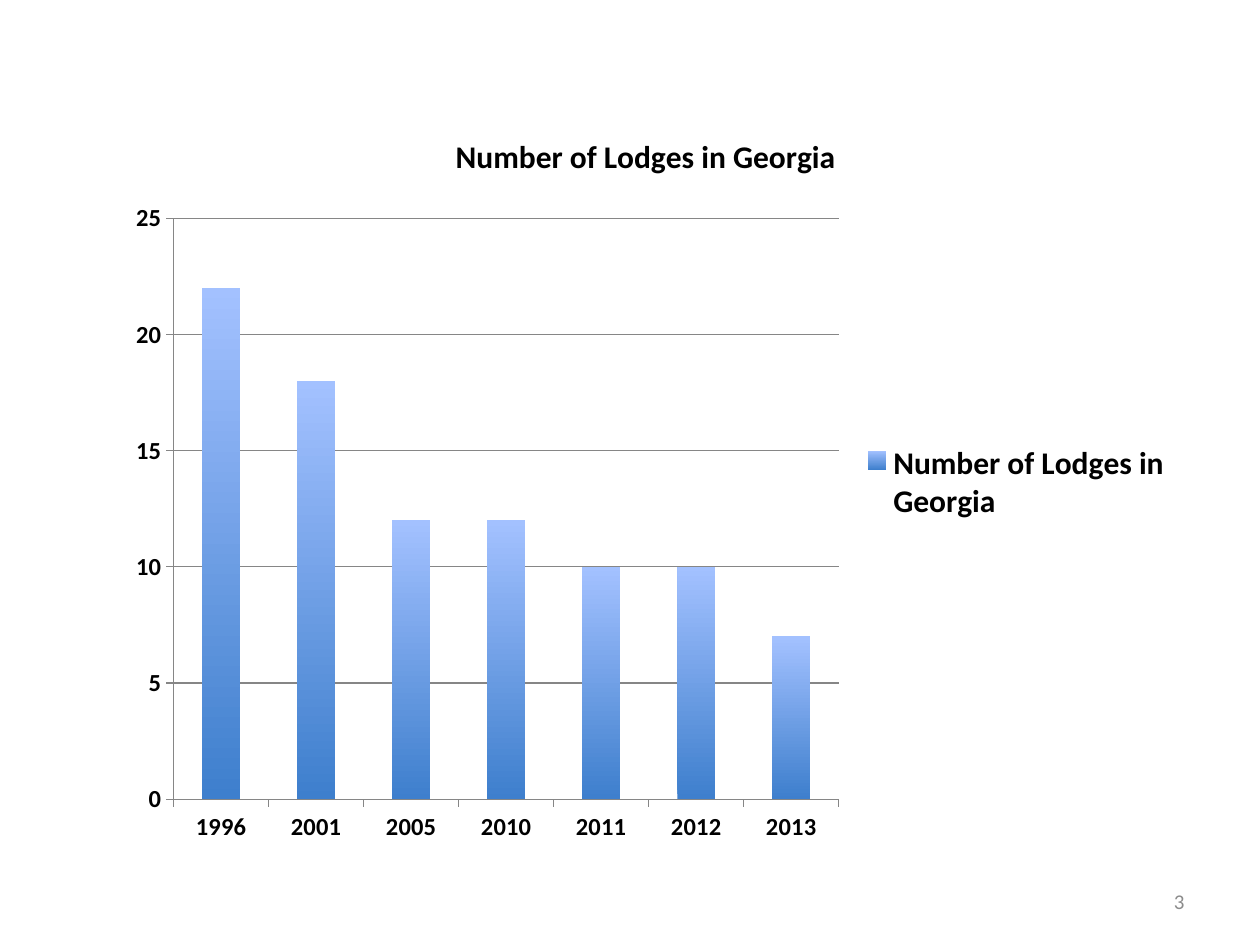
from pptx import Presentation
from pptx.chart.data import CategoryChartData
from pptx.dml.color import RGBColor
from pptx.enum.chart import XL_CHART_TYPE, XL_LEGEND_POSITION, XL_TICK_MARK
from pptx.enum.text import MSO_ANCHOR, PP_ALIGN
from pptx.oxml import parse_xml
from pptx.oxml.ns import nsdecls, qn
from pptx.util import Pt

COLUMNS = XL_CHART_TYPE.COLUMN_CLUSTERED
LEGEND_RIGHT = XL_LEGEND_POSITION.RIGHT
TICK_OUTSIDE = XL_TICK_MARK.OUTSIDE
MIDDLE = MSO_ANCHOR.MIDDLE
RIGHT = PP_ALIGN.RIGHT

FONT = "Calibri"
BLACK, GREY, AXIS_GREY = "000000", "8C8C8C", "868686"
BAR_BOTTOM, BAR_TOP = "3E7FCD", "A3C1FF"

LODGES_TITLE = "Number of Lodges in Georgia"
LODGES_BY_YEAR = {
    "1996": 22, "2001": 18, "2005": 12, "2010": 12,
    "2011": 10, "2012": 10, "2013": 7,
}


def colour(hex_value):
    return RGBColor.from_string(hex_value)


def format_font(font, hex_value=BLACK, **values):
    for name, value in {"name": FONT, **values}.items():
        setattr(font, name, value)
    font.color.rgb = colour(hex_value)


def format_axis_line(line):
    line.color.rgb = colour(AXIS_GREY)
    line.width = Pt(0.75)


def set_layout(parent, index, fractions, inner=False):
    """Place a chart part by its fractions (x, y, w, h) of the chart box."""
    for old in parent.findall(qn("c:layout")):
        parent.remove(old)
    target = '<c:layoutTarget val="inner"/>' if inner else ""
    modes = '<c:xMode val="edge"/><c:yMode val="edge"/>'
    sizes = "".join(f'<c:{key} val="{value}"/>' for key, value in zip("xywh", fractions))
    parent.insert(index, parse_xml(
        f'<c:layout {nsdecls("c")}><c:manualLayout>{target}{modes}{sizes}'
        "</c:manualLayout></c:layout>"))


def add_lodges_chart(page, box):
    data = CategoryChartData()
    data.categories = list(LODGES_BY_YEAR)
    data.add_series(LODGES_TITLE, list(LODGES_BY_YEAR.values()))
    chart = page.shapes.add_chart(COLUMNS, *map(Pt, box), data).chart
    format_font(chart.font, size=Pt(10))

    chart.has_title = True
    title_frame = chart.chart_title.text_frame
    title_frame.text = LODGES_TITLE
    format_font(title_frame.paragraphs[0].runs[0].font, size=Pt(18), bold=True)

    chart.has_legend = True
    legend = chart.legend
    legend.position = LEGEND_RIGHT
    legend.include_in_layout = False
    format_font(legend.font, size=Pt(18), bold=True)

    for axis in (chart.category_axis, chart.value_axis):
        axis.major_tick_mark = TICK_OUTSIDE
        format_font(axis.tick_labels.font, size=Pt(14), bold=True)
        format_axis_line(axis.format.line)
    values = chart.value_axis
    values.minimum_scale, values.maximum_scale, values.major_unit = 0, 25, 5
    values.has_major_gridlines = True
    format_axis_line(values.major_gridlines.format.line)

    plot = chart.plots[0]
    plot.gap_width = 150
    plot.vary_by_categories = False
    fill = plot.series[0].format.fill
    fill.gradient()
    fill.gradient_angle = 90
    for stop, hex_value in zip(fill.gradient_stops, (BAR_BOTTOM, BAR_TOP)):
        stop.color.rgb = colour(hex_value)

    chart_xml = chart.element.find(qn("c:chart"))
    set_layout(chart_xml.find(qn("c:plotArea")), 0, (0.06, 0.15, 0.62, 0.78), inner=True)
    set_layout(chart_xml.find(qn("c:legend")), 1, (0.7, 0.45, 0.29, 0.11))


def add_page_number(page, box, number):
    frame = page.shapes.add_textbox(*map(Pt, box)).text_frame
    frame.word_wrap = True
    frame.vertical_anchor = MIDDLE
    para = frame.paragraphs[0]
    para.alignment = RIGHT
    span = para.add_run()
    span.text = str(number)
    format_font(span.font, GREY, size=Pt(12))


def main():
    deck = Presentation()
    deck.slide_width, deck.slide_height = Pt(720), Pt(540)
    page = deck.slides.add_slide(deck.slide_layouts[6])
    add_lodges_chart(page, (62.5, 61, 613, 425.5))
    add_page_number(page, (516, 500.5, 168, 28.75), 3)
    deck.save("out.pptx")


if __name__ == "__main__":
    main()
